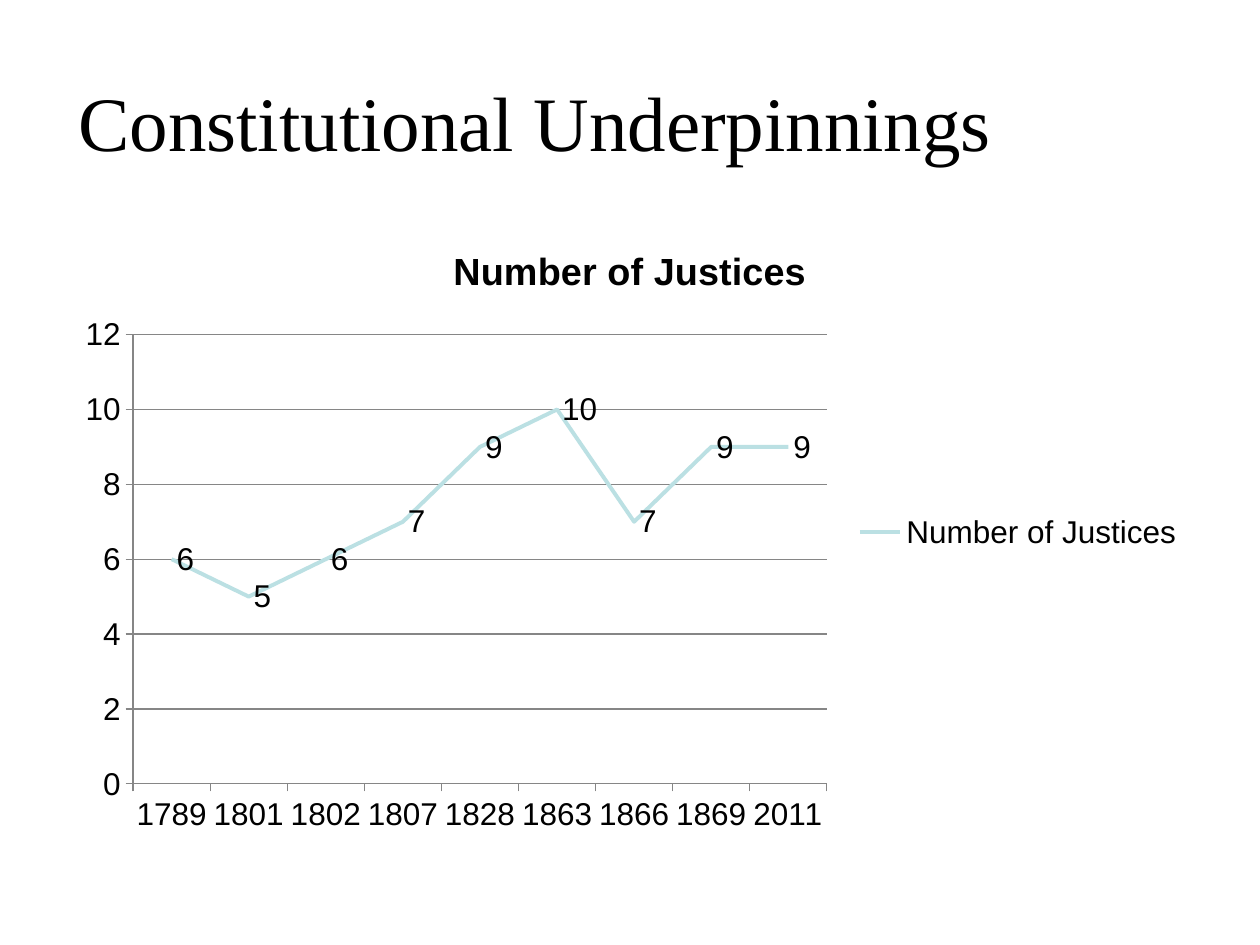
"""Build a slide with a title and a line chart of the number of justices."""
from dataclasses import dataclass

from pptx import Presentation
from pptx import util as u
from pptx.chart.data import CategoryChartData
from pptx.dml.color import RGBColor
from pptx.enum import chart as ch, text

PX = u.Inches(1) // 100


@dataclass(frozen=True)
class Theme:
    ink: str = "000000"
    paper: str = "FFFFFF"
    grid: str = "868686"
    line: str = "BBE0E3"
    serif: str = "Times New Roman"
    sans: str = "Arial"
    head: float = 44
    sub: float = 21.6
    body: float = 18
    thin: float = 0.75
    thick: float = 2.25


class Deck:
    def __init__(self, theme, wide, high):
        self.theme = theme
        self.prs = Presentation()
        self.prs.slide_width, self.prs.slide_height = wide * PX, high * PX
        self.slide = self.prs.slides.add_slide(self.prs.slide_layouts[5])
        fill = self.slide.background.fill
        fill.solid()
        fill.fore_color.rgb = RGBColor.from_string(theme.paper)

    def font(self, font, name, size, bold=False):
        font.name, font.size, font.bold = name, u.Pt(size), bold
        font.color.rgb = RGBColor.from_string(self.theme.ink)

    def stroke(self, line, color, width):
        line.color.rgb = RGBColor.from_string(color)
        line.width = u.Pt(width)

    def title(self, words, x, y, w, h):
        box = self.slide.shapes.title
        box.left, box.top, box.width, box.height = (n * PX for n in (x, y, w, h))
        frame = box.text_frame
        frame.text = words
        frame.word_wrap = True
        frame.auto_size = text.MSO_AUTO_SIZE.NONE
        frame.vertical_anchor = text.MSO_ANCHOR.MIDDLE
        para = frame.paragraphs[0]
        para.alignment = text.PP_ALIGN.CENTER
        self.font(para.font, self.theme.serif, self.theme.head)

    def chart(self, name, points, x, y, w, h):
        look = self.theme
        data = CategoryChartData()
        data.categories = list(points)
        data.add_series(name, list(points.values()))
        chart = self.slide.shapes.add_chart(
            ch.XL_CHART_TYPE.LINE_STACKED, *(n * PX for n in (x, y, w, h)), data
        ).chart
        self.font(chart.font, look.sans, look.body)

        chart.has_title = True
        chart.chart_title.include_in_layout = False
        frame = chart.chart_title.text_frame
        frame.text = name
        self.font(frame.paragraphs[0].font, look.sans, look.sub, bold=True)

        chart.has_legend = True
        chart.legend.position = ch.XL_LEGEND_POSITION.RIGHT
        chart.legend.include_in_layout = False

        for axis in (chart.category_axis, chart.value_axis):
            axis.major_tick_mark = ch.XL_TICK_MARK.OUTSIDE
            axis.minor_tick_mark = ch.XL_TICK_MARK.NONE
            self.stroke(axis.format.line, look.grid, look.thin)
        axis = chart.value_axis
        axis.minimum_scale, axis.maximum_scale, axis.major_unit = 0, 12, 2
        axis.has_major_gridlines = True
        self.stroke(axis.major_gridlines.format.line, look.grid, look.thin)

        plot = chart.plots[0]
        plot.vary_by_categories = False
        line = plot.series[0]
        line.smooth = False
        line.marker.style = ch.XL_MARKER_STYLE.NONE
        self.stroke(line.format.line, look.line, look.thick)
        tags = line.data_labels
        tags.show_value = True
        tags.position = ch.XL_LABEL_POSITION.RIGHT
        self.font(tags.font, look.sans, look.body)


def main():
    deck = Deck(Theme(), 1000, 750)
    deck.title("Constitutional Underpinnings", 0, 33, 850, 125)
    seats = {"1789": 6, "1801": 5, "1802": 6, "1807": 7, "1828": 9,
             "1863": 10, "1866": 7, "1869": 9, "2011": 9}
    deck.chart("Number of Justices", seats, 50, 175, 900, 495)
    deck.prs.save("out.pptx")


if __name__ == "__main__":
    main()
